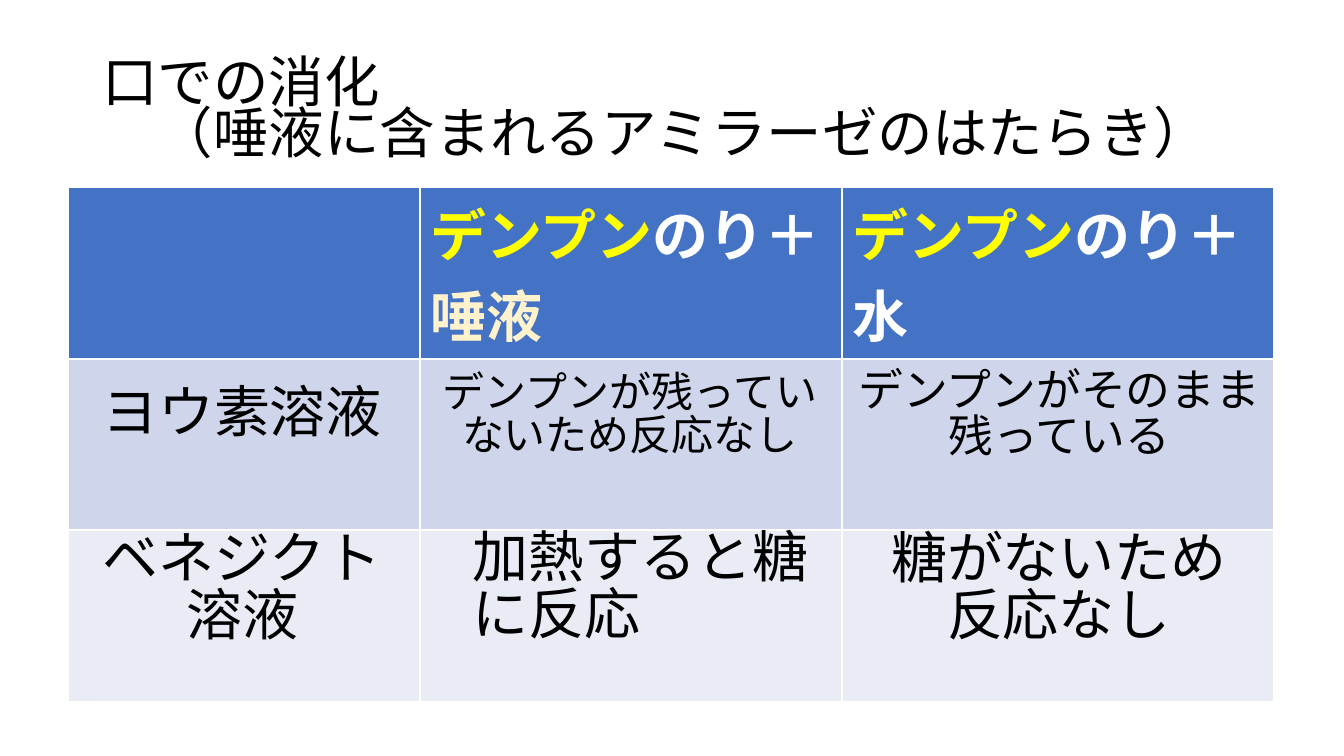
from dataclasses import dataclass

from lxml import etree
from pptx import Presentation
from pptx.dml.color import RGBColor
from pptx.enum.text import MSO_ANCHOR, MSO_AUTO_SIZE, PP_ALIGN
from pptx.oxml.ns import qn
from pptx.util import Emu, Pt

EMU_PER_PX = 9525
FONT = "Noto Sans CJK JP"
LEFT, CENTER = PP_ALIGN.LEFT, PP_ALIGN.CENTER
MIDDLE = MSO_ANCHOR.MIDDLE
NO_AUTOFIT = MSO_AUTO_SIZE.NONE
TITLE_ONLY = 5

BLACK, WHITE, YELLOW, CREAM = "000000", "FFFFFF", "FFFF00", "FFF2CC"
ROW_FILLS = ["4472C4", "CFD5EA", "E9EBF5"]

TITLE = "口での消化\v　（唾液に含まれるアミラーゼのはたらき）"
TABLE_LEFT, TABLE_TOP = 65, 178
COL_WIDTHS = [335, 402, 411]
ROW_HEIGHTS = [134, 163, 163]
HEADERS = [
    [],
    [("デンプン", YELLOW), ("のり＋", WHITE), ("唾液", CREAM)],
    [("デンプン", YELLOW), ("のり＋水", WHITE)],
]


@dataclass
class Label:
    text: str
    x: int
    y: int
    w: int
    h: int = 96
    size: int = 40
    align: PP_ALIGN = CENTER


LABELS = [
    Label("デンプンが残っていないため反応なし", 405, 348, 390, size=30),
    Label("デンプンがそのまま残っている", 804, 348, 410, size=32),
    Label("加熱すると糖に反応", 441, 502, 347, h=118, align=LEFT),
    Label("糖がないため反応なし", 824, 514, 369),
    Label("ヨウ素溶液", 76, 348, 309),
    Label("ベネジクト溶液", 76, 514, 309),
]


def px(n: int) -> Emu:
    return Emu(n * EMU_PER_PX)


def rgb(color: str) -> RGBColor:
    return RGBColor.from_string(color)


def format_run(r, size: float, color: str, bold: bool = False) -> None:
    f = r.font
    f.size, f.bold, f.name = Pt(size), bold, FONT
    f.color.rgb = rgb(color)
    etree.SubElement(r._r.get_or_add_rPr(), qn("a:ea"), typeface=FONT)


def format_frame(tf, size: float, align: PP_ALIGN, spacing: float) -> None:
    tf.word_wrap = True
    tf.auto_size = NO_AUTOFIT
    tf.vertical_anchor = MIDDLE
    p = tf.paragraphs[0]
    p.alignment, p.line_spacing = align, spacing
    for r in p.runs:
        format_run(r, size, BLACK)
    # A line break carries its own text size
    for br in p._p.findall(qn("a:br")):
        etree.SubElement(br, qn("a:rPr"), sz=str(round(size * 100)))


def add_title(slide) -> None:
    sp = slide.shapes.title
    sp.left, sp.top, sp.width, sp.height = px(88), px(38), px(1104), px(139)
    sp.text_frame.text = TITLE
    format_frame(sp.text_frame, 39.6, LEFT, 0.77)


def add_results_table(slide) -> None:
    table = slide.shapes.add_table(
        len(ROW_HEIGHTS), len(COL_WIDTHS), px(TABLE_LEFT), px(TABLE_TOP),
        px(sum(COL_WIDTHS)), px(sum(ROW_HEIGHTS))).table
    for col, width in zip(table.columns, COL_WIDTHS):
        col.width = px(width)
    for row, height, fill in zip(table.rows, ROW_HEIGHTS, ROW_FILLS):
        row.height = px(height)
        for cell in row.cells:
            cell.fill.solid()
            cell.fill.fore_color.rgb = rgb(fill)
    for cell, parts in zip(table.rows[0].cells, HEADERS):
        p = cell.text_frame.paragraphs[0]
        for text, color in parts:
            r = p.add_run()
            r.text = text
            format_run(r, 40, color, bold=True)


def add_label(slide, label: Label) -> None:
    sp = slide.shapes.add_textbox(
        px(label.x), px(label.y), px(label.w), px(label.h))
    sp.text_frame.text = label.text
    format_frame(sp.text_frame, label.size, label.align, 0.85)


def main() -> None:
    prs = Presentation()
    prs.slide_width, prs.slide_height = px(1280), px(720)
    slide = prs.slides.add_slide(prs.slide_layouts[TITLE_ONLY])

    # Heading, table, then the results laid over its cells
    add_title(slide)
    add_results_table(slide)
    for label in LABELS:
        add_label(slide, label)

    prs.save("out.pptx")


if __name__ == "__main__":
    main()
